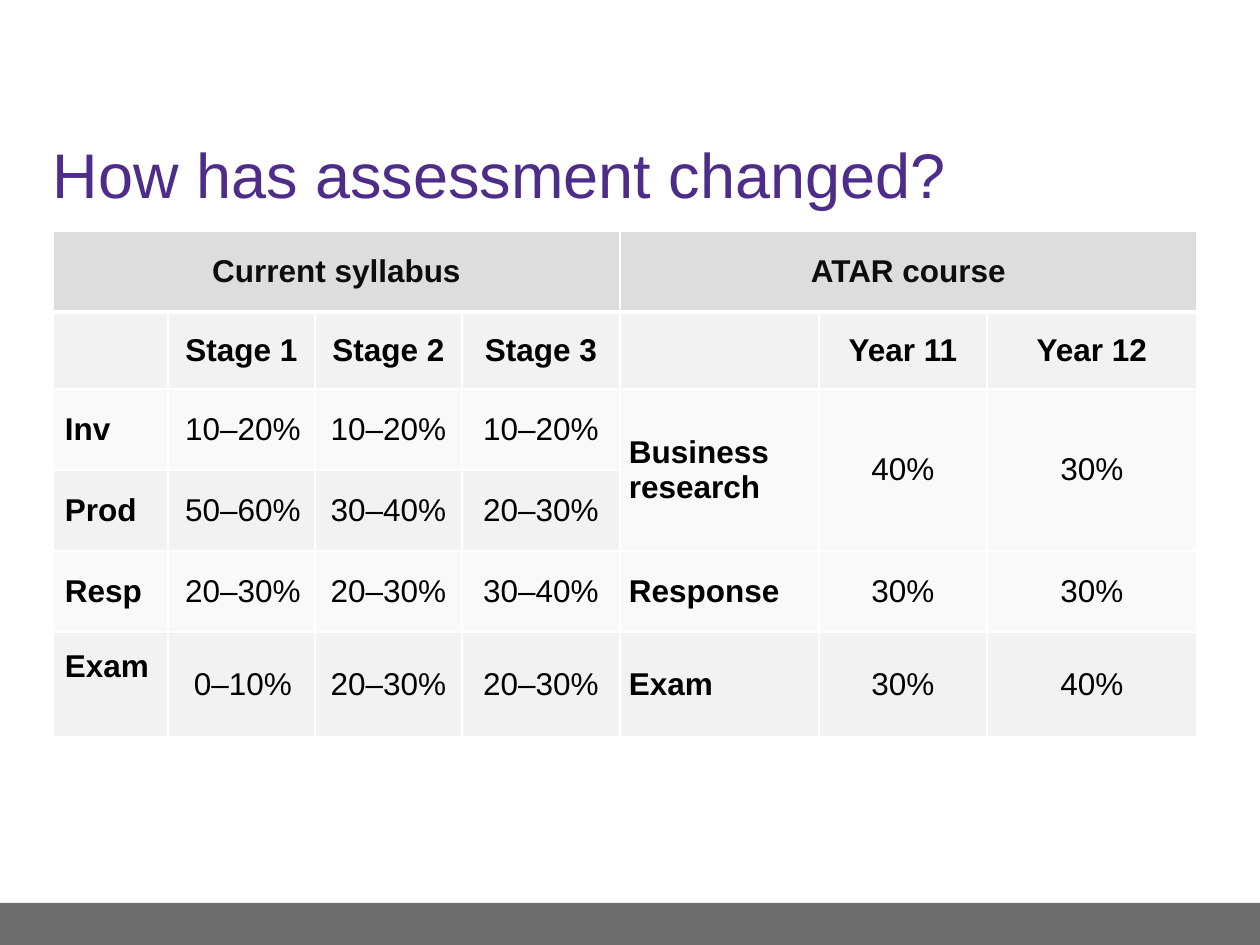
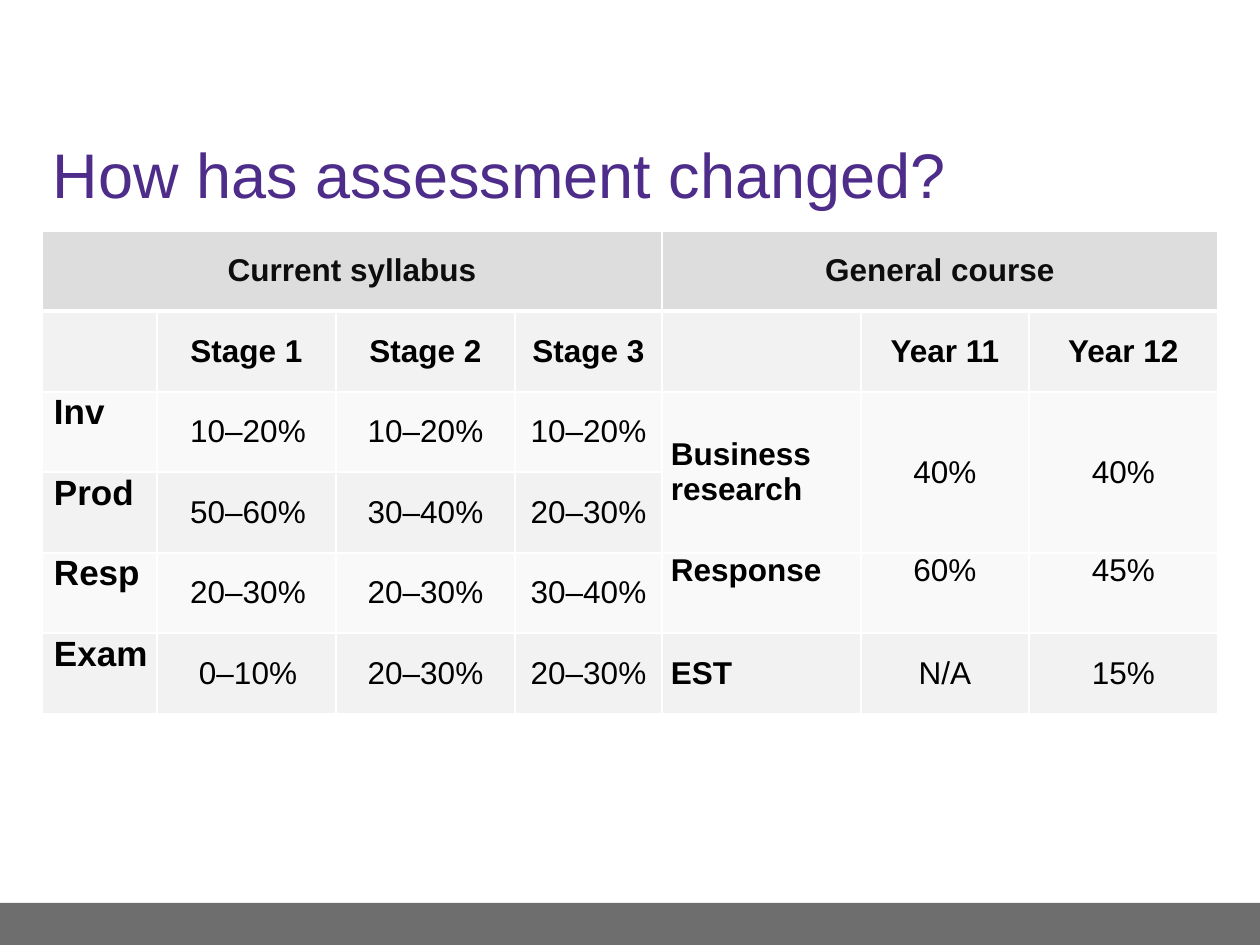
"""Build two slides that compare assessment weightings in the current and new courses."""
import pptx
import pptx.dml.color
import pptx.enum.shapes
import pptx.enum.text
import pptx.oxml
import pptx.oxml.ns
import pptx.util

PX = 914400 // 126
FONT = "Arial"
WHITE, BLACK, INK = "FFFFFF", "000000", "0D0D0D"
PURPLE, BAND = "4D2C8A", "6E6E6E"
HEAD, ODD, EVEN = "DDDDDD", "F2F2F2", "F9F9F9"
ANCHOR = pptx.enum.text.MSO_ANCHOR
ALIGN = pptx.enum.text.PP_ALIGN


def rgb(value):
    return pptx.dml.color.RGBColor.from_string(value)


class Deck:
    def __init__(self):
        self.prs = pptx.Presentation()
        self.prs.slide_width = pptx.util.Inches(10)
        self.prs.slide_height = pptx.util.Inches(7.5)
        self.s = None

    def slide(self, title):
        self.s = self.prs.slides.add_slide(self.prs.slide_layouts[5])
        self.band(0, 903, 1260, 42)
        self.title(title)

    def band(self, x, y, w, h):
        sp = self.s.shapes.add_shape(pptx.enum.shapes.MSO_SHAPE.RECTANGLE,
                                     x * PX, y * PX, w * PX, h * PX)
        sp.shadow.inherit = False
        sp.fill.solid()
        sp.fill.fore_color.rgb = rgb(BAND)
        sp.line.fill.background()

    def title(self, text):
        sp = self.s.shapes.title
        sp.left, sp.top, sp.width, sp.height = 40 * PX, 115 * PX, 1178 * PX, 116 * PX
        tf = sp.text_frame
        tf.text = text
        tf.vertical_anchor = ANCHOR.MIDDLE
        self.format(tf.paragraphs[0], 36, PURPLE, False, ALIGN.LEFT)

    def format(self, p, size, color, bold, align):
        p.alignment = align
        p.font.name = FONT
        p.font.size = pptx.util.Pt(size)
        p.font.bold = bold
        p.font.color.rgb = rgb(color)

    def borders(self, cell, row):
        tc_pr = cell._tc.get_or_add_tcPr()
        widths = {"L": 1, "R": 1, "T": 3 if row == 1 else 1, "B": 3 if row == 0 else 1}
        for i, (side, width) in enumerate(widths.items()):
            tc_pr.insert(i, pptx.oxml.parse_xml(
                f'<a:ln{side} {pptx.oxml.ns.nsdecls("a")} w="{pptx.util.Pt(width)}">'
                f'<a:solidFill><a:srgbClr val="{WHITE}"/></a:solidFill></a:ln{side}>'))

    def cell(self, cell, row, col, text, label_size):
        cell.fill.solid()
        cell.fill.fore_color.rgb = rgb(HEAD if row == 0 else ODD if row % 2 else EVEN)
        self.borders(cell, row)
        cell.vertical_anchor = ANCHOR.MIDDLE
        if row:
            cell.margin_left = (12 if row > 1 and col < 2 else 9) * PX
            cell.margin_right = (9 if col else 3) * PX
            cell.margin_top = cell.margin_bottom = 0
        if text:
            label = row > 1 and col in (0, 4)
            cell.text = text
            self.format(cell.text_frame.paragraphs[0], label_size if col == 0 and row > 1 else 18,
                        BLACK if row else INK, row < 2 or label,
                        ALIGN.LEFT if label else ALIGN.CENTER)

    def table(self, x, y, widths, heights, rows, label_size):
        t = self.s.shapes.add_table(len(heights), len(widths), x * PX, y * PX,
                                    sum(widths) * PX, sum(heights) * PX).table
        for column, width in zip(t.columns, widths):
            column.width = width * PX
        for table_row, height in zip(t.rows, heights):
            table_row.height = height * PX
        for i, row in enumerate(rows):
            for j, text in enumerate(row):
                self.cell(t.cell(i, j), i, j, text, label_size)
        t.cell(0, 0).merge(t.cell(0, 3))
        t.cell(0, 4).merge(t.cell(0, 6))
        for j in range(4, 7):
            t.cell(2, j).merge(t.cell(3, j))
        return t


TITLE = "How has assessment changed?"
STAGES = [
    ["", "Stage 1", "Stage 2", "Stage 3"],
    ["Inv", "10–20%", "10–20%", "10–20%"],
    ["Prod", "50–60%", "30–40%", "20–30%"],
    ["Resp", "20–30%", "20–30%", "30–40%"],
    ["Exam", "0–10%", "20–30%", "20–30%"],
]
YEARS = ["", "Year 11", "Year 12"]
MERGED = ["", "", ""]
ATAR = [
    YEARS,
    ["Business research", "40%", "30%"],
    MERGED,
    ["Response", "30%", "30%"],
    ["Exam", "30%", "40%"],
]
GENERAL = [
    YEARS,
    ["Business research", "40%", "40%"],
    MERGED,
    ["Response", "60%", "45%"],
    ["EST", "N/A", "15%"],
]


def compare(course, weights):
    heading = ["Current syllabus", "", "", "", course, "", ""]
    return [heading] + [stage + weight for stage, weight in zip(STAGES, weights)]


def main():
    deck = Deck()

    deck.slide(TITLE)
    t = deck.table(53, 231, [115, 147, 147, 158, 199, 168, 210],
                   [81, 77, 81, 81, 81, 105], compare("ATAR course", ATAR), 18)
    t.cell(5, 0).margin_bottom = 35 * PX

    deck.slide(TITLE)
    t = deck.table(42, 231, [115, 179, 179, 147, 199, 168, 189],
                   [80, 81] * 3, compare("General course", GENERAL), 20)
    for i in range(2, 6):
        t.cell(i, 0).margin_bottom = 39 * PX
    for j in range(4, 7):
        t.cell(4, j).vertical_anchor = ANCHOR.TOP

    deck.prs.save("out.pptx")


if __name__ == "__main__":
    main()
